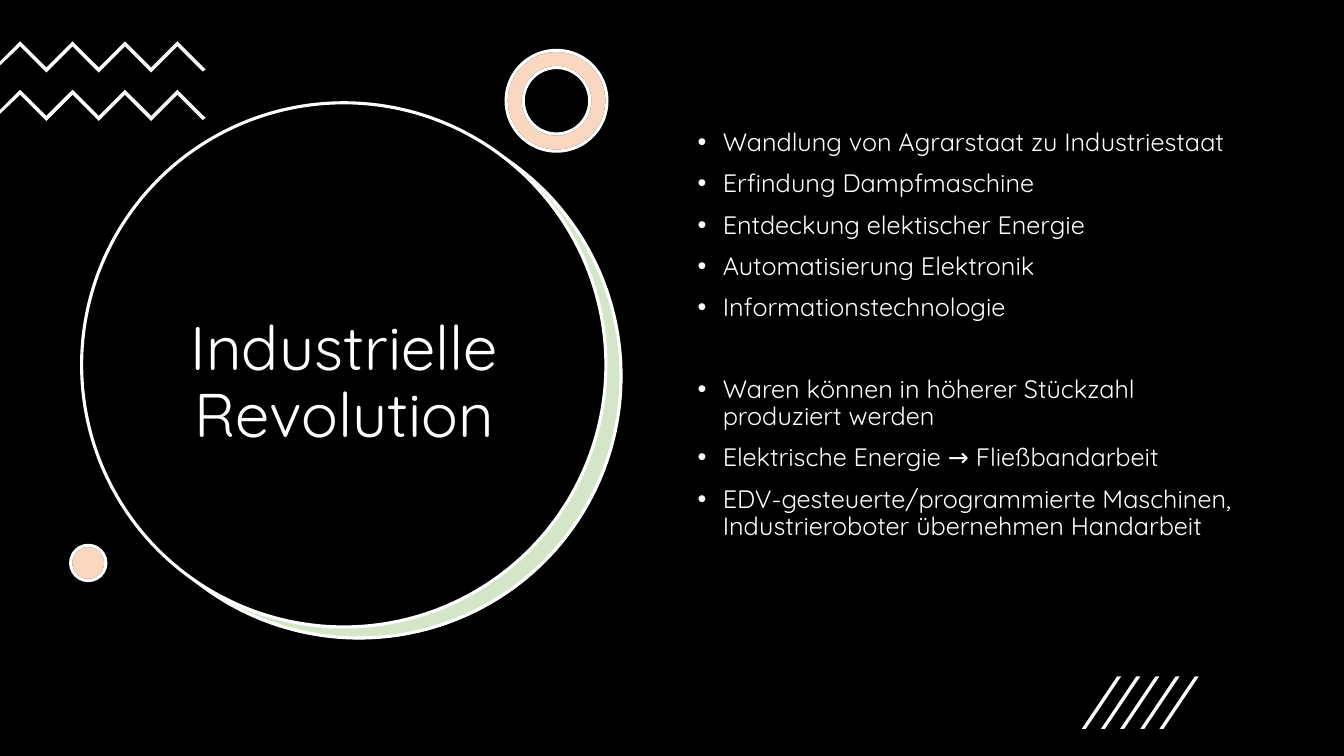
from lxml.etree import SubElement
from pptx import Presentation
from pptx.dml.color import RGBColor
from pptx.enum.shapes import MSO_SHAPE
from pptx.enum.text import MSO_ANCHOR, PP_ALIGN
from pptx.oxml.ns import qn
from pptx.util import Emu, Pt

PX = 9144  # EMU in one px, 100 px to the inch
WIDTH, HEIGHT = 1333, 750
COLOURS = {"black": "000000", "white": "FFFFFF", "green": "70AD47", "orange": "ED7D31"}
TITLE_FORMAT = {"alignment": PP_ALIGN.CENTER, "line_spacing": 0.9}
BULLET_FORMAT = {"line_spacing": 0.9, "space_before": Pt(10)}
SECOND_GROUP_FORMAT = {**BULLET_FORMAT, "space_before": Pt(39)}

CHANGES = [
    "Wandlung von Agrarstaat zu Industriestaat",
    "Erfindung Dampfmaschine",
    "Entdeckung elektischer Energie",
    "Automatisierung Elektronik",
    "Informationstechnologie",
]
EFFECTS = [
    "Waren können in höherer Stückzahl produziert werden",
    "Elektrische Energie → Fließbandarbeit",
    "EDV-gesteuerte/programmierte Maschinen, Industrieroboter übernehmen Handarbeit",
]


def set_all(target, values):
    for name, value in values.items():
        setattr(target, name, value)


class SlideBuilder:
    font = "Quicksand"
    outline = Pt(2.25)

    def __init__(self, slide):
        self.slide = slide

    def paint(self, shape, fill, line=None, alpha=None):
        """Give the shape its fill, with alpha in percent, and its outline."""
        shape.shadow.inherit = False
        shape.fill.solid()
        shape.fill.fore_color.rgb = RGBColor.from_string(COLOURS[fill])
        if alpha:
            colour = shape.fill._xPr.find(qn("a:solidFill"))[0]
            SubElement(colour, qn("a:alpha"), val=str(alpha * 1000))
        if line:
            shape.line.color.rgb = RGBColor.from_string(COLOURS[line])
            shape.line.width = self.outline
        else:
            shape.line.fill.background()

    def preset(self, kind, box, fill, line=None, alpha=None):
        shape = self.slide.shapes.add_shape(kind, *(Emu(length * PX) for length in box))
        self.paint(shape, fill, line, alpha)
        return shape

    def polygon(self, points, fill):
        builder = self.slide.shapes.build_freeform(*points[0], scale=PX)
        builder.add_line_segments(points[1:], close=True)
        self.paint(builder.convert_to_shape(), fill)

    def text_box(self, box, anchor):
        shape = self.slide.shapes.add_textbox(*(Emu(length * PX) for length in box))
        set_all(shape.text_frame, {"word_wrap": True, "vertical_anchor": anchor})
        return shape.text_frame

    def add_text(self, paragraph, text, size, values):
        set_all(paragraph, values)
        run = paragraph.add_run()
        run.text = text
        set_all(run.font, {"name": self.font, "size": Pt(size)})
        run.font.color.rgb = RGBColor.from_string(COLOURS["white"])

    def bullet(self, paragraph, text, values):
        self.add_text(paragraph, text, 18, values)
        properties = paragraph._p.get_or_add_pPr()
        properties.set("marL", str(25 * PX))
        properties.set("indent", str(-25 * PX))
        SubElement(properties, qn("a:buFont"), typeface="Arial")
        SubElement(properties, qn("a:buChar"), char="•")

    def zigzag(self, top):
        corners = [(20 + 26 * i, top + 26 * (i % 2)) for i in range(7)]
        lower = [(x, y + 5) for x, y in reversed(corners)]
        ends = [(204, top + 28), (201, top + 30)]
        start = [(0, top + 24), (0, top + 20)]
        self.polygon(corners + ends + lower + start, "white")

    def stripe(self, left):
        self.polygon([(left + 4, 723), (left, 723), (left + 35, 671), (left + 39, 671)], "white")


def main():
    presentation = Presentation()
    set_all(presentation, {"slide_width": Emu(WIDTH * PX), "slide_height": Emu(HEIGHT * PX)})
    builder = SlideBuilder(presentation.slides.add_slide(presentation.slide_layouts[6]))

    builder.preset(MSO_SHAPE.RECTANGLE, (0, 0, WIDTH, HEIGHT), "black")
    builder.preset(MSO_SHAPE.OVAL, (97, 114, 520, 520), "white")
    builder.preset(MSO_SHAPE.OVAL, (96, 113, 520, 520), "green", "white", 30)
    builder.preset(MSO_SHAPE.OVAL, (81, 102, 520, 520), "black", "white")
    title = builder.text_box((121, 205, 441, 352), MSO_ANCHOR.MIDDLE)
    builder.add_text(title.paragraphs[0], "Industrielle Revolution", 44, TITLE_FORMAT)

    for top in (41, 89):
        builder.zigzag(top)

    for fill, line, alpha in (("white", "black", None), ("orange", "white", 30)):
        ring = builder.preset(MSO_SHAPE.DONUT, (502, 50, 100, 100), fill, line, alpha)
        ring.adjustments[0] = 0.17
        builder.preset(MSO_SHAPE.OVAL, (70, 541, 35, 35), fill, line, alpha)

    body = builder.text_box((682, 124, 571, 476), MSO_ANCHOR.TOP)
    for i, text in enumerate(CHANGES + EFFECTS):
        paragraph = body.add_paragraph() if i else body.paragraphs[0]
        values = SECOND_GROUP_FORMAT if i == len(CHANGES) else BULLET_FORMAT
        builder.bullet(paragraph, text, values)

    for i in range(5):
        builder.stripe(1073 + round(19.2 * i))

    presentation.save("out.pptx")


if __name__ == "__main__":
    main()
